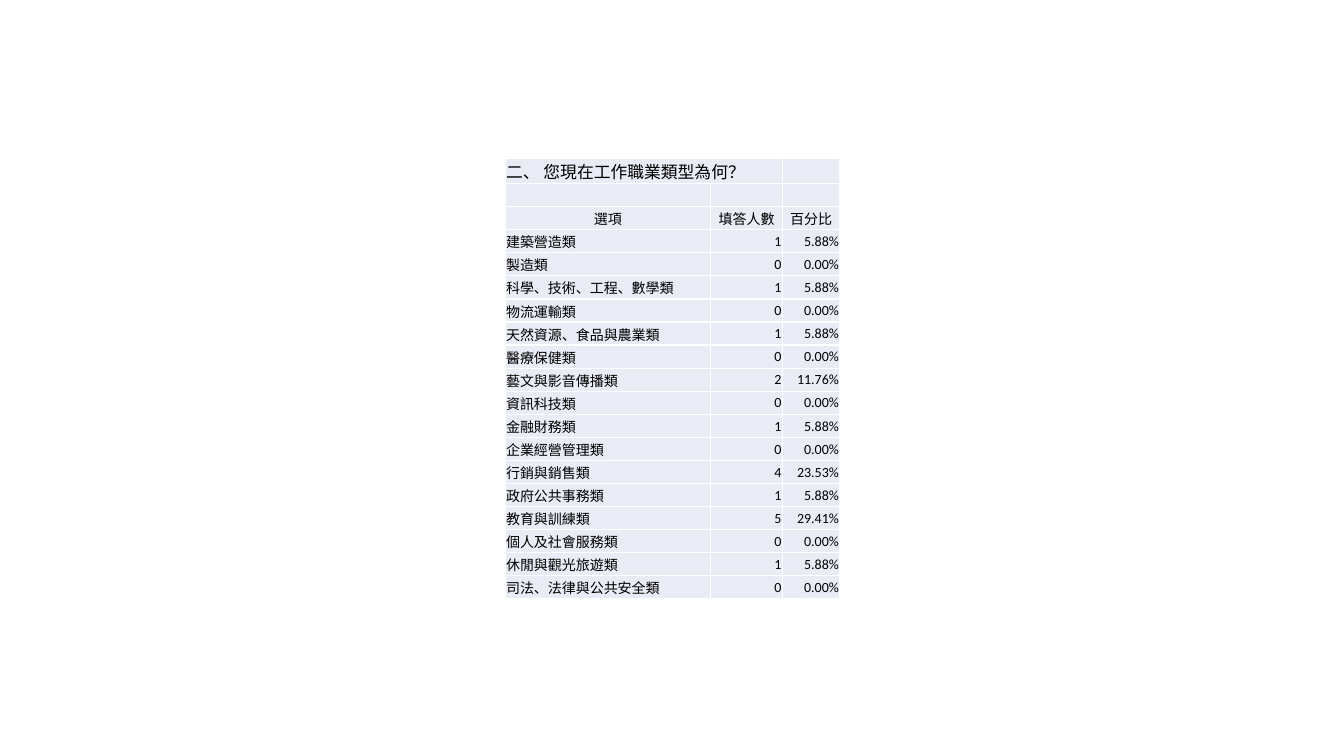
from lxml.etree import SubElement
from pptx import Presentation
from pptx.dml.color import RGBColor
from pptx.enum.text import MSO_ANCHOR, PP_ALIGN
from pptx.oxml.ns import qn
from pptx.util import Inches, Pt

COLORS = {"text": "000000", "cell": "E9EBF5", "border": "FFFFFF"}
FONT = "Calibri"
TITLE = "二、 您現在工作職業類型為何？"
HEADERS = ["選項", "填答人數", "百分比"]
ANSWERS = [
    ("建築營造類", 1),
    ("製造類", 0),
    ("科學、技術、工程、數學類", 1),
    ("物流運輸類", 0),
    ("天然資源、食品與農業類", 1),
    ("醫療保健類", 0),
    ("藝文與影音傳播類", 2),
    ("資訊科技類", 0),
    ("金融財務類", 1),
    ("企業經營管理類", 0),
    ("行銷與銷售類", 4),
    ("政府公共事務類", 1),
    ("教育與訓練類", 5),
    ("個人及社會服務類", 0),
    ("休閒與觀光旅遊類", 1),
    ("司法、法律與公共安全類", 0),
]
COLUMN_WIDTHS = [2.04, 0.71, 0.57]
TABLE_HEIGHT = 4.35


def add_borders(cell):
    tc_pr = cell._tc.get_or_add_tcPr()
    for i, side in enumerate(("a:lnL", "a:lnR", "a:lnT", "a:lnB")):
        line = tc_pr.makeelement(qn(side), {"w": str(Pt(1))})
        fill = SubElement(line, qn("a:solidFill"))
        SubElement(fill, qn("a:srgbClr"), val=COLORS["border"])
        tc_pr.insert(i, line)


def style_cell(cell):
    cell.fill.solid()
    cell.fill.fore_color.rgb = RGBColor.from_string(COLORS["cell"])
    cell.vertical_anchor = MSO_ANCHOR.MIDDLE
    cell.margin_left = cell.margin_right = cell.margin_top = Inches(0.01)
    cell.margin_bottom = 0
    add_borders(cell)


def write_cell(cell, text, align, size):
    p = cell.text_frame.paragraphs[0]
    p.text = text
    p.alignment = align
    p.font.name = FONT
    p.font.size = Pt(size)
    p.font.color.rgb = RGBColor.from_string(COLORS["text"])
    if not text:
        SubElement(p._p, qn("a:endParaRPr"), sz=str(size * 100))


def survey_rows():
    """Return the text of every row, with each answer's share of the total."""
    total = sum(count for _, count in ANSWERS)
    answers = [[name, str(count), f"{count / total:.2%}"] for name, count in ANSWERS]
    return [[TITLE, "", ""], ["", "", ""], HEADERS] + answers


def add_survey_table(s, rows):
    frame = s.shapes.add_table(len(rows), len(COLUMN_WIDTHS), Inches(5.01), Inches(1.57),
                               Inches(sum(COLUMN_WIDTHS)), Inches(TABLE_HEIGHT))
    table = frame.table
    table.first_row = table.horz_banding = False
    for column, width in zip(table.columns, COLUMN_WIDTHS):
        column.width = Inches(width)
    for i, texts in enumerate(rows):
        table.rows[i].height = Inches(TABLE_HEIGHT / len(rows))
        for j, text in enumerate(texts):
            if texts is HEADERS:
                align = PP_ALIGN.CENTER
            else:
                align = PP_ALIGN.RIGHT if j else PP_ALIGN.LEFT
            style_cell(table.cell(i, j))
            write_cell(table.cell(i, j), text, align, 12 if text == TITLE else 10)
    table.cell(0, 0).merge(table.cell(0, 1))


def main():
    prs = Presentation()
    prs.slide_width, prs.slide_height = Inches(13.33), Inches(7.5)
    s = prs.slides.add_slide(prs.slide_layouts[6])
    add_survey_table(s, survey_rows())
    prs.save("out.pptx")


if __name__ == "__main__":
    main()
